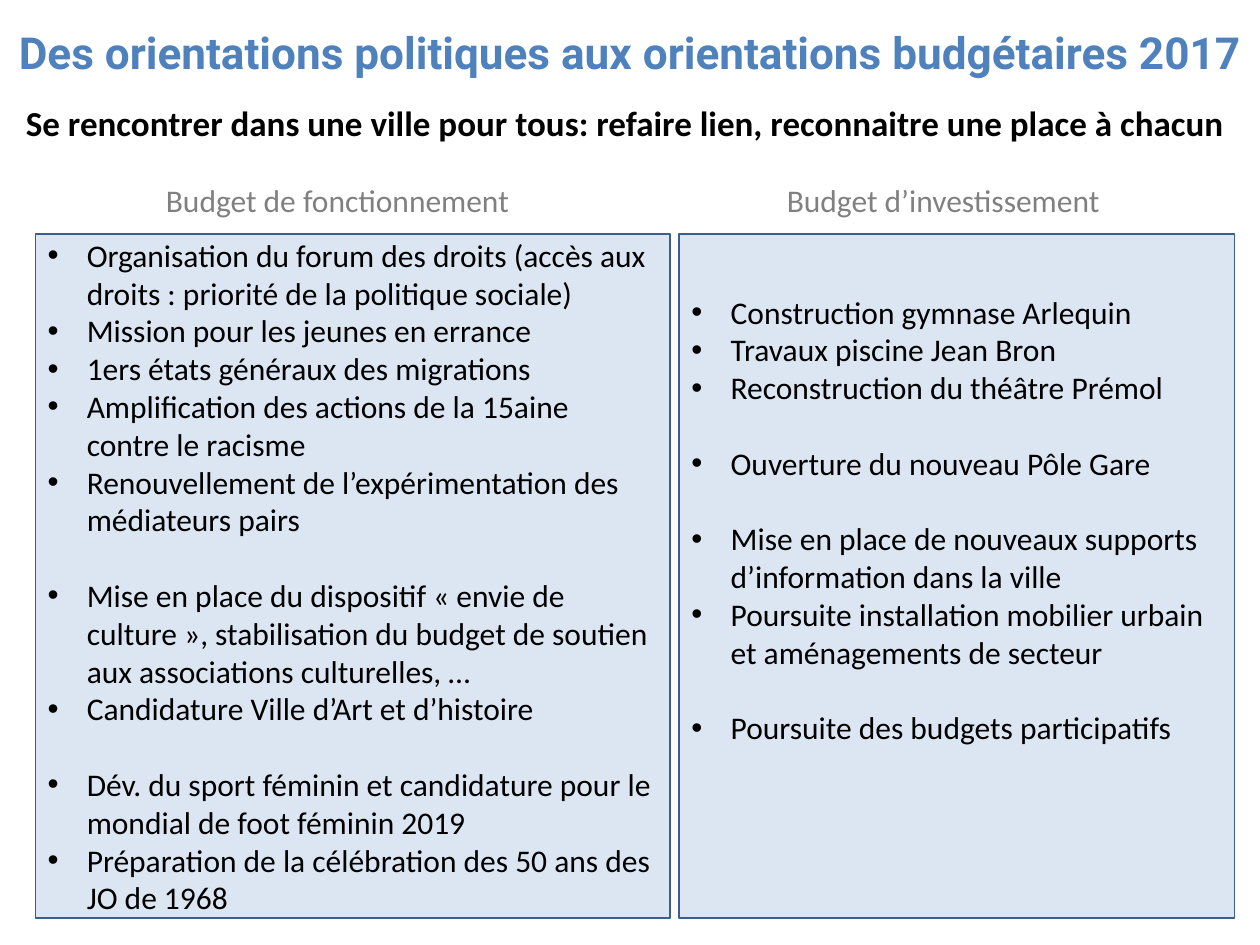
from dataclasses import dataclass

import pptx
import pptx.dml.color
import pptx.enum.shapes
import pptx.enum.text
import pptx.util
from lxml import etree
from pptx.oxml.ns import qn
from pptx.util import Cm

COLORS = {
    "title": "4F81BD",
    "text": "000000",
    "heading": "808080",
    "panel": "DCE6F2",
    "border": "3A5F8C",
}
ALIGN = pptx.enum.text.PP_ALIGN
ANCHOR = pptx.enum.text.MSO_ANCHOR
PANEL_TOP, PANEL_HEIGHT = 4.72, 13.79
HEADING_TOP, HEADING_HEIGHT = 3.53, 1.02
INDENT = Cm(0.79)
LINE_PITCH = 21.6  # points, one line of 18 pt text


@dataclass
class Budget:
    heading: str
    heading_left: float
    heading_width: float
    left: float
    width: float
    bottom_inset: float
    groups: list[list[str]]


BUDGETS = [
    Budget("Budget de fonctionnement", 0.71, 12.19, 0.71, 12.8, 0.13, [
        ["Organisation du forum des droits (accès aux droits : priorité de la politique sociale)",
         "Mission pour les jeunes en errance",
         "1ers états généraux des migrations",
         "Amplification des actions de la 15aine contre le racisme",
         "Renouvellement de l’expérimentation des médiateurs pairs"],
        ["Mise en place du dispositif « envie de culture », stabilisation du budget "
         "de soutien aux associations culturelles, …",
         "Candidature Ville d’Art et d’histoire"],
        ["Dév. du sport féminin et candidature pour le mondial de foot féminin 2019",
         "Préparation de la célébration des 50 ans des JO de 1968"],
    ]),
    Budget("Budget d’investissement", 13.21, 11.61, 13.69, 11.2, 2.41, [
        ["Construction gymnase Arlequin",
         "Travaux piscine Jean Bron",
         "Reconstruction du théâtre Prémol"],
        ["Ouverture du nouveau Pôle Gare"],
        ["Mise en place de nouveaux supports d’information dans la ville",
         "Poursuite installation mobilier urbain et aménagements de secteur"],
        ["Poursuite des budgets participatifs"],
    ]),
]


def rgb(name: str) -> pptx.dml.color.RGBColor:
    return pptx.dml.color.RGBColor.from_string(COLORS[name])


def write(paragraph, text: str, *, size: float = 18, color: str = "text",
          font: str = "Calibri", bold: bool = False, align=ALIGN.CENTER,
          space_before: float = 0) -> None:
    paragraph.alignment = align
    paragraph.space_before = pptx.util.Pt(space_before)
    run = paragraph.add_run()
    run.text = text
    run.font.name = font
    run.font.size = pptx.util.Pt(size)
    run.font.bold = bold
    run.font.color.rgb = rgb(color)


def add_bullet(paragraph) -> None:
    properties = paragraph._p.get_or_add_pPr()
    properties.set("marL", str(INDENT))
    properties.set("indent", str(-INDENT))
    etree.SubElement(properties, qn("a:buFont")).set("typeface", "Arial")
    etree.SubElement(properties, qn("a:buChar")).set("char", "•")


def add_label(slide, text: str, left: float, top: float, width: float,
              height: float, **text_format) -> None:
    label = slide.shapes.add_textbox(Cm(left), Cm(top), Cm(width), Cm(height))
    label.text_frame.word_wrap = True
    write(label.text_frame.paragraphs[0], text, **text_format)


def add_budget(slide, budget: Budget) -> None:
    add_label(slide, budget.heading, budget.heading_left, HEADING_TOP,
              budget.heading_width, HEADING_HEIGHT, color="heading")
    panel = slide.shapes.add_shape(
        pptx.enum.shapes.MSO_SHAPE.RECTANGLE,
        Cm(budget.left), Cm(PANEL_TOP), Cm(budget.width), Cm(PANEL_HEIGHT))
    panel.shadow.inherit = False
    panel.fill.solid()
    panel.fill.fore_color.rgb = rgb("panel")
    panel.line.color.rgb = rgb("border")
    panel.line.width = pptx.util.Pt(0.75)

    frame = panel.text_frame
    frame.word_wrap = True
    frame.vertical_anchor = ANCHOR.MIDDLE
    frame.margin_bottom = Cm(budget.bottom_inset)
    paragraph = frame.paragraphs[0]
    for group_index, group in enumerate(budget.groups):
        for item_index, item in enumerate(group):
            if group_index or item_index:
                paragraph = frame.add_paragraph()
            # One line of space sets each later group apart
            gap = LINE_PITCH if group_index and not item_index else 0
            write(paragraph, item, align=ALIGN.LEFT, space_before=gap)
            add_bullet(paragraph)


def main() -> None:
    presentation = pptx.Presentation()
    presentation.slide_width, presentation.slide_height = Cm(25.4), Cm(19.05)
    slide = presentation.slides.add_slide(presentation.slide_layouts[5])

    # Title
    title = slide.shapes.title
    title.left, title.top, title.width, title.height = Cm(0), Cm(0), Cm(25.4), Cm(2.11)
    title.text_frame.auto_size = pptx.enum.text.MSO_AUTO_SIZE.NONE
    title.text_frame.vertical_anchor = ANCHOR.MIDDLE
    write(title.text_frame.paragraphs[0],
          "Des orientations politiques aux orientations budgétaires 2017",
          size=25.2, color="title", font="Roboto", bold=True)

    # Guiding theme
    add_label(slide, "Se rencontrer dans une ville pour tous: refaire lien, "
              "reconnaitre une place à chacun", 0.05, 1.93, 25.1, 1.19,
              size=20, bold=True)

    # Operating and investment budgets
    for budget in BUDGETS:
        add_budget(slide, budget)

    presentation.save("out.pptx")


if __name__ == "__main__":
    main()
